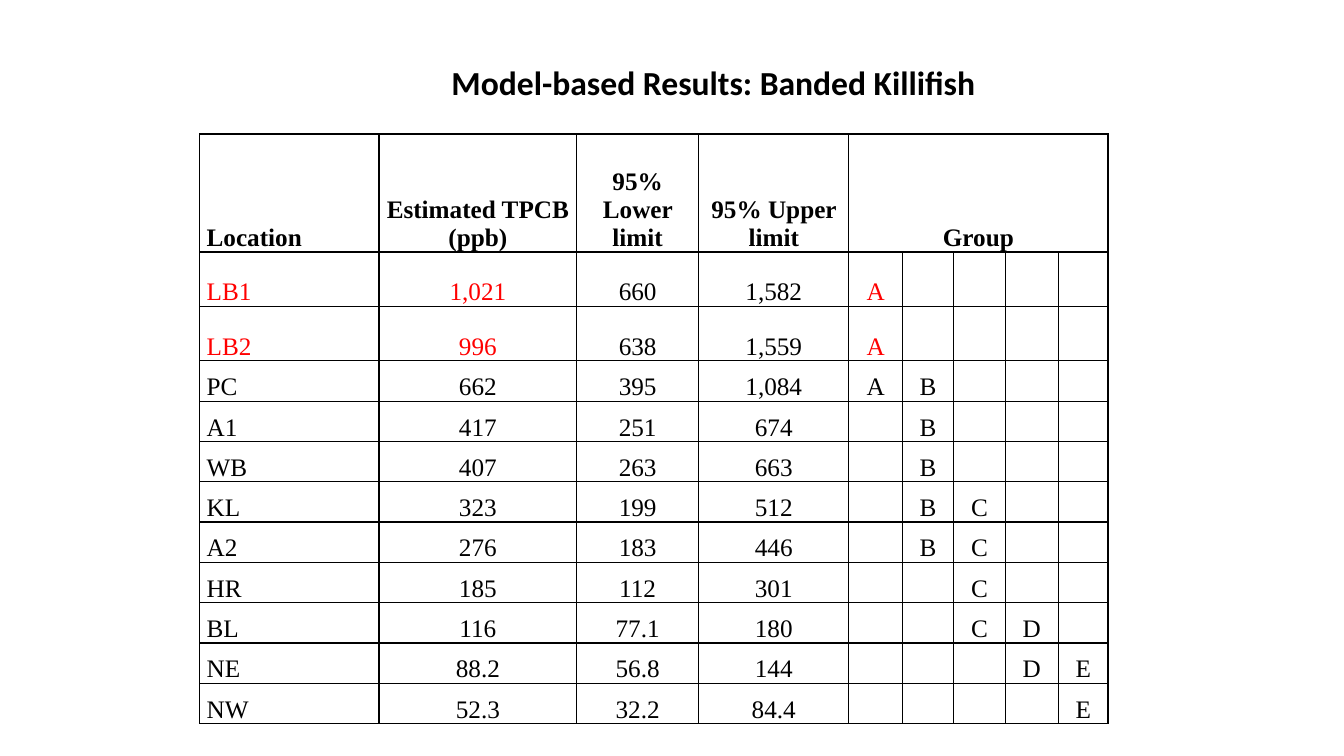
from lxml import etree
from pptx import Presentation
from pptx.dml.color import RGBColor
from pptx.enum.text import MSO_ANCHOR, MSO_AUTO_SIZE, PP_ALIGN
from pptx.oxml.ns import qn
from pptx.util import Inches, Pt

LEFT, CENTER = PP_ALIGN.LEFT, PP_ALIGN.CENTER
BOTTOM = MSO_ANCHOR.BOTTOM
FIT_SHAPE = MSO_AUTO_SIZE.SHAPE_TO_FIT_TEXT

COLORS = {"black": "000000", "red": "FF0000"}

HEADERS = ["Location", "Estimated TPCB (ppb)", "95% Lower limit", "95% Upper limit", "Group"]
GROUPS = "ABCDE"
# Location, estimate, lower limit, upper limit, group letters
RESULTS = [
    ("LB1", "1,021", "660", "1,582", "A"),
    ("LB2", "996", "638", "1,559", "A"),
    ("PC", "662", "395", "1,084", "AB"),
    ("A1", "417", "251", "674", "B"),
    ("WB", "407", "263", "663", "B"),
    ("KL", "323", "199", "512", "BC"),
    ("A2", "276", "183", "446", "BC"),
    ("HR", "185", "112", "301", "C"),
    ("BL", "116", "77.1", "180", "CD"),
    ("NE", "88.2", "56.8", "144", "DE"),
    ("NW", "52.3", "32.2", "84.4", "E"),
]
HIGHLIGHTED_LOCATIONS = {"LB1", "LB2"}
LIMIT_COLUMNS = (2, 3)
COLUMN_WIDTHS = [1.78, 1.96, 1.21, 1.49, 0.53, 0.51, 0.51, 0.53, 0.49]
ROW_HEIGHTS = [1.17] + [0.54] * 2 + [0.4] * 9


def style_font(paragraph, name, size, color, bold):
    font = paragraph.font
    font.name = name
    font.size = Pt(size)
    font.bold = bold
    font.color.rgb = RGBColor.from_string(COLORS[color])


def add_borders(cell):
    properties = cell._tc.get_or_add_tcPr()
    for index, side in enumerate(("lnL", "lnR", "lnT", "lnB")):
        line = etree.Element(qn(f"a:{side}"), w=str(Pt(1)))
        fill = etree.SubElement(line, qn("a:solidFill"))
        etree.SubElement(fill, qn("a:srgbClr"), val=COLORS["black"])
        properties.insert(index, line)


presentation = Presentation()
presentation.slide_width = Inches(13.33)
presentation.slide_height = Inches(7.5)
slide = presentation.slides.add_slide(presentation.slide_layouts[6])

# Results table
table = slide.shapes.add_table(
    len(ROW_HEIGHTS), len(COLUMN_WIDTHS),
    Inches(1.98), Inches(1.33), Inches(sum(COLUMN_WIDTHS)), Inches(sum(ROW_HEIGHTS)),
).table
table.first_row = False
table.horz_banding = False
for column, width in zip(table.columns, COLUMN_WIDTHS):
    column.width = Inches(width)
for row, height in zip(table.rows, ROW_HEIGHTS):
    row.height = Inches(height)

# One row of text per table row, with each group letter in its own column
rows = [HEADERS + [""] * (len(GROUPS) - 1)]
for *values, letters in RESULTS:
    rows.append(values + [group if group in letters else "" for group in GROUPS])

for row_index, texts in enumerate(rows):
    for column_index, text in enumerate(texts):
        cell = table.cell(row_index, column_index)
        cell.fill.background()
        add_borders(cell)
        cell.vertical_anchor = BOTTOM
        cell.margin_left = cell.margin_right = Inches(0.07)
        cell.margin_top = cell.margin_bottom = 0
        cell.text = text
        paragraph = cell.text_frame.paragraphs[0]
        paragraph.alignment = LEFT if column_index == 0 else CENTER
        highlighted = texts[0] in HIGHLIGHTED_LOCATIONS and column_index not in LIMIT_COLUMNS
        style_font(paragraph, "Times New Roman", 18,
                   "red" if highlighted else "black", row_index == 0)

# The Group heading spans all group columns
table.cell(0, 4).merge(table.cell(0, 8))

# Title
title = slide.shapes.add_textbox(Inches(4.38), Inches(0.57), Inches(5.46), Inches(0.5))
title.text_frame.word_wrap = False
title.text_frame.auto_size = FIT_SHAPE
title.text_frame.text = "Model-based Results: Banded Killifish"
style_font(title.text_frame.paragraphs[0], "Calibri", 24, "black", True)

presentation.save("out.pptx")
